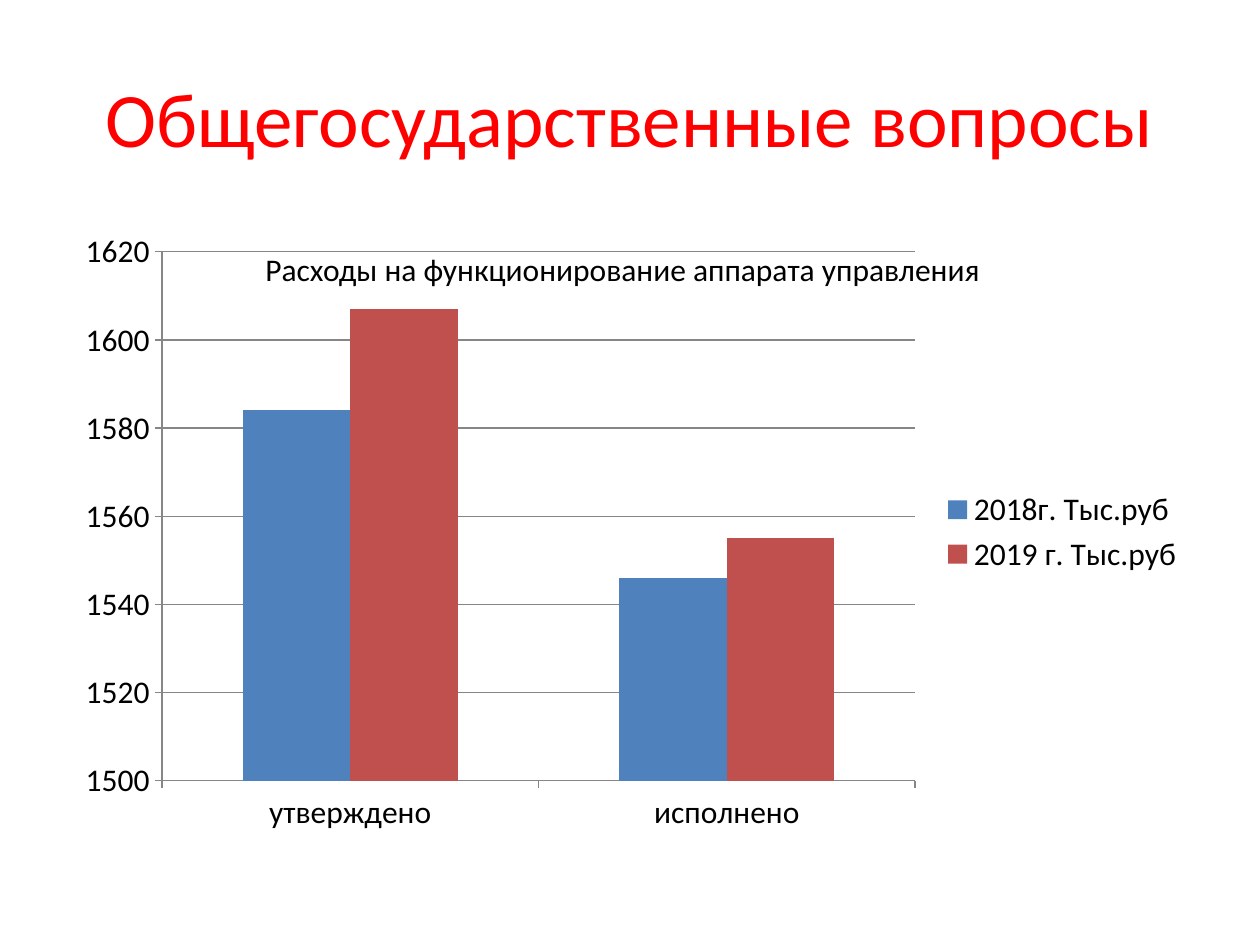
from dataclasses import dataclass

from pptx import Presentation
from pptx.chart.data import CategoryChartData
from pptx.dml.color import RGBColor
from pptx.enum.chart import XL_CHART_TYPE, XL_LEGEND_POSITION, XL_TICK_MARK
from pptx.enum.text import MSO_ANCHOR, MSO_AUTO_SIZE, PP_ALIGN
from pptx.util import Cm, Pt


@dataclass(frozen=True)
class Theme:
    font: str = "Calibri"
    title_size: int = 44
    text_size: int = 18
    title: str = "FF0000"
    text: str = "000000"
    line: str = "868686"
    series: tuple = ("4F81BD", "C0504D")


THEME = Theme()


def rgb(color):
    return RGBColor.from_string(color)


def set_font(font, size, color):
    font.name = THEME.font
    font.size = Pt(size)
    font.color.rgb = rgb(color)


def place(sp, left, top, width, height):
    sp.left, sp.top, sp.width, sp.height = map(Cm, (left, top, width, height))


def add_title(s, text):
    sp = s.shapes.title
    place(sp, 1.27, 0.76, 22.86, 3.18)
    tf = sp.text_frame
    tf.text = text
    tf.vertical_anchor = MSO_ANCHOR.MIDDLE
    p = tf.paragraphs[0]
    p.alignment = PP_ALIGN.CENTER
    set_font(p.font, THEME.title_size, THEME.title)


def style_line(line):
    line.color.rgb = rgb(THEME.line)
    line.width = Pt(0.75)


def style_axis(axis):
    axis.major_tick_mark = XL_TICK_MARK.OUTSIDE
    axis.minor_tick_mark = XL_TICK_MARK.NONE
    style_line(axis.format.line)


def add_column_chart(s, categories, series):
    data = CategoryChartData()
    data.categories = categories
    for name, values in series.items():
        data.add_series(name, values)
    chart = s.shapes.add_chart(
        XL_CHART_TYPE.COLUMN_CLUSTERED,
        Cm(1.27), Cm(4.44), Cm(22.86), Cm(12.57), data,
    ).chart
    chart.has_title = False
    set_font(chart.font, THEME.text_size, THEME.text)

    style_axis(chart.category_axis)
    axis = chart.value_axis
    style_axis(axis)
    axis.minimum_scale, axis.maximum_scale, axis.major_unit = 1500, 1620, 20
    axis.has_major_gridlines = True
    style_line(axis.major_gridlines.format.line)

    chart.has_legend = True
    chart.legend.position = XL_LEGEND_POSITION.RIGHT
    chart.legend.include_in_layout = False

    plot = chart.plots[0]
    plot.gap_width = 150
    plot.overlap = 0
    plot.vary_by_categories = False
    for ser, color in zip(plot.series, THEME.series):
        ser.invert_if_negative = False
        ser.format.fill.solid()
        ser.format.fill.fore_color.rgb = rgb(color)


def add_caption(s, text):
    sp = s.shapes.add_textbox(Cm(5.1), Cm(4.92), Cm(15.36), Cm(1.02))
    tf = sp.text_frame
    tf.word_wrap = False
    tf.auto_size = MSO_AUTO_SIZE.SHAPE_TO_FIT_TEXT
    tf.text = text
    set_font(tf.paragraphs[0].font, THEME.text_size, THEME.text)


def main():
    prs = Presentation()
    prs.slide_width, prs.slide_height = Cm(25.4), Cm(19.05)
    s = prs.slides.add_slide(prs.slide_layouts[5])
    add_title(s, "Общегосударственные вопросы")
    add_column_chart(
        s,
        ["утверждено", "исполнено"],
        {
            "2018г. Тыс.руб": (1584, 1546),
            "2019 г. Тыс.руб": (1607, 1555),
        },
    )
    add_caption(s, "Расходы на функционирование аппарата управления")
    prs.save("out.pptx")


if __name__ == "__main__":
    main()
